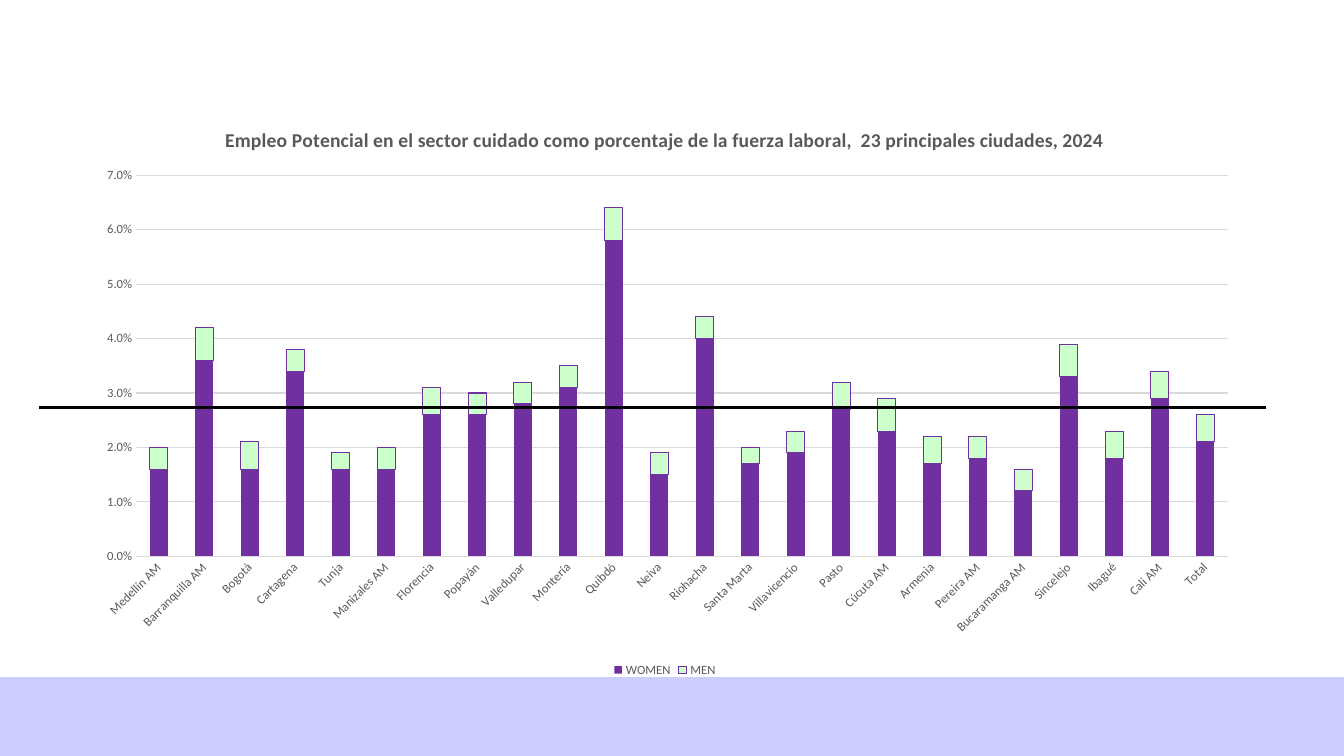
import pptx
import pptx.chart.data
import pptx.dml.color
import pptx.enum.chart
import pptx.enum.shapes
import pptx.oxml
import pptx.oxml.ns
import pptx.util

# Content: city, women, men
TITLE = ("Empleo Potencial en el sector cuidado como porcentaje "
         "de la fuerza laboral,  23 principales ciudades, 2024")
CITIES = [
    ("Medellín AM", 0.016, 0.004),
    ("Barranquilla AM", 0.036, 0.006),
    ("Bogotá", 0.016, 0.005),
    ("Cartagena", 0.034, 0.004),
    ("Tunja", 0.016, 0.003),
    ("Manizales AM", 0.016, 0.004),
    ("Florencia", 0.026, 0.005),
    ("Popayán", 0.026, 0.004),
    ("Valledupar", 0.028, 0.004),
    ("Montería", 0.031, 0.004),
    ("Quibdó", 0.058, 0.006),
    ("Neiva", 0.015, 0.004),
    ("Riohacha", 0.04, 0.004),
    ("Santa Marta", 0.017, 0.003),
    ("Villavicencio", 0.019, 0.004),
    ("Pasto", 0.027, 0.005),
    ("Cúcuta AM", 0.023, 0.006),
    ("Armenia", 0.017, 0.005),
    ("Pereira AM", 0.018, 0.004),
    ("Bucaramanga AM", 0.012, 0.004),
    ("Sincelejo", 0.033, 0.006),
    ("Ibagué", 0.018, 0.005),
    ("Cali AM", 0.029, 0.005),
    ("Total", 0.021, 0.005),
]
NAMES, WOMEN, MEN = zip(*CITIES)
# Name, values, fill, line
SERIES = [("WOMEN", WOMEN, "7030A0", None), ("MEN", MEN, "CCFFCC", "7030A0")]
GREY, PALE, LILAC = "595959", "D9D9D9", "CCCCFF"
# Chart frame, and plot area inside it, in inches
LEFT, TOP, SPAN, TALL = 0.78, 1.05, 11.63, 5.71
PLOT = {"x": 0.57 / SPAN, "y": 0.69 / TALL,
        "w": 10.83 / SPAN, "h": 3.78 / TALL}

inch = pptx.util.Inches
WIDE, HIGH = inch(13.33), inch(7.5)
BAND = inch(0.78)


def tint(code):
    return pptx.dml.color.RGBColor.from_string(code)


def fill(part, code):
    part.fill.solid()
    part.fill.fore_color.rgb = tint(code)


def rule(line, code, width):
    line.color.rgb = tint(code)
    line.width = pptx.util.Pt(width)


def style(font, size, bold=False):
    font.name = "Calibri"
    font.size = pptx.util.Pt(size)
    font.bold = bold
    font.color.rgb = tint(GREY)


deck = pptx.Presentation()
deck.slide_width, deck.slide_height = WIDE, HIGH
slide = deck.slides.add_slide(deck.slide_layouts[6])

# Bottom band
band = slide.shapes.add_shape(pptx.enum.shapes.MSO_SHAPE.RECTANGLE,
                              0, HIGH - BAND, WIDE, BAND)
band.shadow.inherit = False
fill(band, LILAC)
rule(band.line, LILAC, 1)

# Stacked columns
data = pptx.chart.data.CategoryChartData(number_format="0.0%")
data.categories = NAMES
for name, vals, *_ in SERIES:
    data.add_series(name, vals)
chart = slide.shapes.add_chart(
    pptx.enum.chart.XL_CHART_TYPE.COLUMN_STACKED,
    inch(LEFT), inch(TOP), inch(SPAN), inch(TALL), data).chart
style(chart.font, 10)
plot = chart.plots[0]
plot.gap_width, plot.overlap = 150, 100
plot.vary_by_categories = False
for bar, (_, _, color, edge) in zip(plot.series, SERIES):
    fill(bar.format, color)
    if edge:
        rule(bar.format.line, edge, 0.75)

# Chart title and legend
chart.has_title = True
head = chart.chart_title.text_frame
head.text = TITLE
style(head.paragraphs[0].runs[0].font, 14, True)
chart.chart_title.include_in_layout = False
chart.has_legend = True
chart.legend.position = pptx.enum.chart.XL_LEGEND_POSITION.BOTTOM
chart.legend.include_in_layout = False
style(chart.legend.font, 9)

# Axes
cat, val = chart.category_axis, chart.value_axis
for axis in (cat, val):
    axis.major_tick_mark = pptx.enum.chart.XL_TICK_MARK.NONE
    axis.minor_tick_mark = pptx.enum.chart.XL_TICK_MARK.NONE
    style(axis.tick_labels.font, 9)
rule(cat.format.line, PALE, 0.75)
val.format.line.fill.background()
val.has_major_gridlines = True
rule(val.major_gridlines.format.line, PALE, 0.75)
val.minimum_scale, val.maximum_scale, val.major_unit = 0, 0.07, 0.01
val.tick_labels.number_format = "0.0%"
val.tick_labels.number_format_is_linked = False

# Slanted city names and fixed plot area
qn = pptx.oxml.ns.qn
turn = cat._element.find(qn("c:txPr")).find(qn("a:bodyPr"))
turn.set("rot", str(-45 * 60000))
turn.set("vert", "horz")
area = chart._chartSpace.find(".//" + qn("c:plotArea"))
for old in area.findall(qn("c:layout")):
    area.remove(old)
modes = "".join(f'<c:{key}Mode val="edge"/>' for key in "xy")
sizes = "".join(f'<c:{key} val="{num}"/>' for key, num in PLOT.items())
area.insert(0, pptx.oxml.parse_xml(
    f'<c:layout {pptx.oxml.ns.nsdecls("c")}><c:manualLayout>'
    f'<c:layoutTarget val="inner"/>{modes}{sizes}'
    '</c:manualLayout></c:layout>'))

# Reference line
mark = slide.shapes.add_connector(
    pptx.enum.shapes.MSO_CONNECTOR.STRAIGHT,
    inch(12.56), inch(4.04), inch(0.39), inch(4.04))
rule(mark.line, "000000", 2.25)
mark._element.spPr.append(pptx.oxml.parse_xml(
    f'<a:effectLst {pptx.oxml.ns.nsdecls("a")}/>'))

deck.save("out.pptx")
